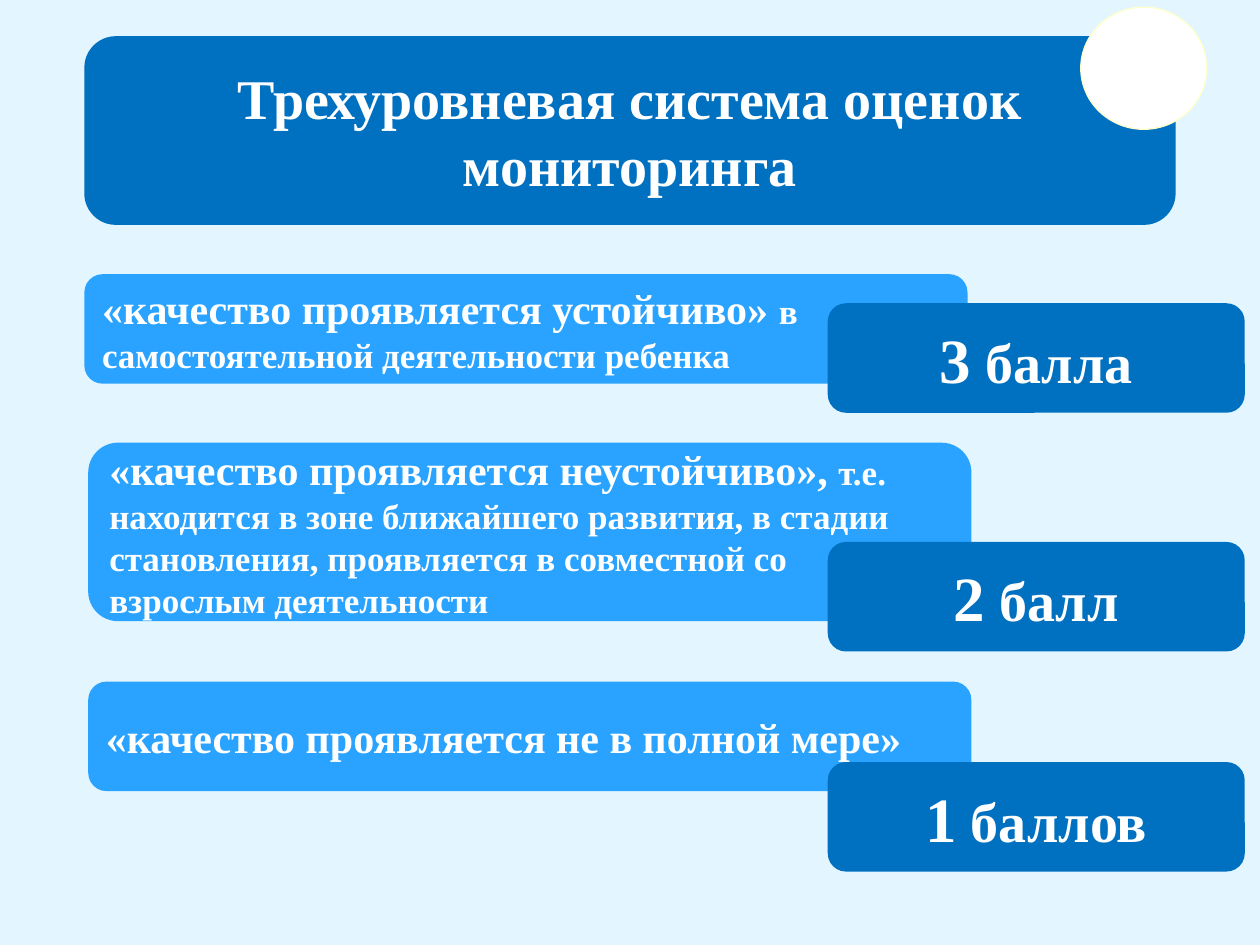
from pptx import Presentation
from pptx.dml.color import RGBColor
from pptx.enum import shapes, text
from pptx.util import Pt

DARK_BLUE = RGBColor(0x00, 0x70, 0xC0)
LIGHT_BLUE = RGBColor(0x29, 0xA3, 0xFF)
PALE_BLUE = RGBColor(0xE3, 0xF6, 0xFF)
CREAM = RGBColor(0xFF, 0xFF, 0xCC)
WHITE = RGBColor(0xFF, 0xFF, 0xFF)

FONT = {"name": "Times New Roman", "bold": True}
LEFT, CENTER = text.PP_ALIGN.LEFT, text.PP_ALIGN.CENTER
ROUNDED, OVAL = shapes.MSO_SHAPE.ROUNDED_RECTANGLE, shapes.MSO_SHAPE.OVAL

SCORE_LEFT, SCORE_WIDTH = 473, 238.3
LEVEL_WIDTH, BAR_HEIGHT = 504.7, 62.6

# Level box (left, top, height), score top, criterion, detail, score, unit
LEVELS = [
    ((48.2, 156.7, BAR_HEIGHT), 173.3, "«качество проявляется устойчиво» ",
     "в самостоятельной деятельности ребенка", "3", " балла"),
    ((50.4, 253, 102), 309.7, "«качество проявляется неустойчиво», ",
     "т.е. находится в зоне ближайшего развития, в стадии становления, "
     "проявляется в совместной со взрослым деятельности", "2", " балл"),
    ((50.4, 389.5, BAR_HEIGHT), 435.5, "«качество проявляется не в полной мере»",
     "", "1", " баллов"),
]


def add_shape(page, kind, box, fill):
    shape = page.shapes.add_shape(kind, *(Pt(length) for length in box))
    shape.shadow.inherit = False
    shape.fill.solid()
    shape.fill.fore_color.rgb = fill
    shape.line.fill.background()
    return shape


def add_panel(page, box, fill, align, spans):
    """Rounded panel whose text is a list of (wording, size) spans."""
    frame = add_shape(page, ROUNDED, box, fill).text_frame
    frame.word_wrap = True
    frame.vertical_anchor = text.MSO_ANCHOR.MIDDLE
    para = frame.paragraphs[0]
    para.alignment = align
    for wording, size in spans:
        span = para.add_run()
        span.text = wording
        for name, value in {**FONT, "size": Pt(size)}.items():
            setattr(span.font, name, value)
        span.font.color.rgb = WHITE


def add_header(page, box):
    left, top, width, height = box
    add_panel(page, box, DARK_BLUE, CENTER,
              [("Трехуровневая система оценок мониторинга", 32)])
    # Round badge over the upper right corner
    badge = add_shape(page, OVAL, (left + width - 54.2, top - 16.6, 72, 69.8), WHITE)
    badge.line.color.rgb = CREAM
    badge.line.width = Pt(0.75)


def add_level(page, box, criterion, detail):
    spans = [(criterion, 24), (detail, 20)]
    add_panel(page, box, LIGHT_BLUE, LEFT, [span for span in spans if span[0]])


def add_score(page, box, score, unit):
    add_panel(page, box, DARK_BLUE, CENTER, [(score, 36), (unit, 32)])


def main():
    deck = Presentation()
    deck.slide_width, deck.slide_height = Pt(720), Pt(540)
    page = deck.slides.add_slide(deck.slide_layouts[6])
    page.background.fill.solid()
    page.background.fill.fore_color.rgb = PALE_BLUE

    add_header(page, (48.2, 20.7, 623.6, 107.8))
    # Each score overlaps the lower right corner of its level
    for (left, top, height), score_top, criterion, detail, score, unit in LEVELS:
        add_level(page, (left, top, LEVEL_WIDTH, height), criterion, detail)
        add_score(page, (SCORE_LEFT, score_top, SCORE_WIDTH, BAR_HEIGHT), score, unit)

    deck.save("out.pptx")


if __name__ == "__main__":
    main()
